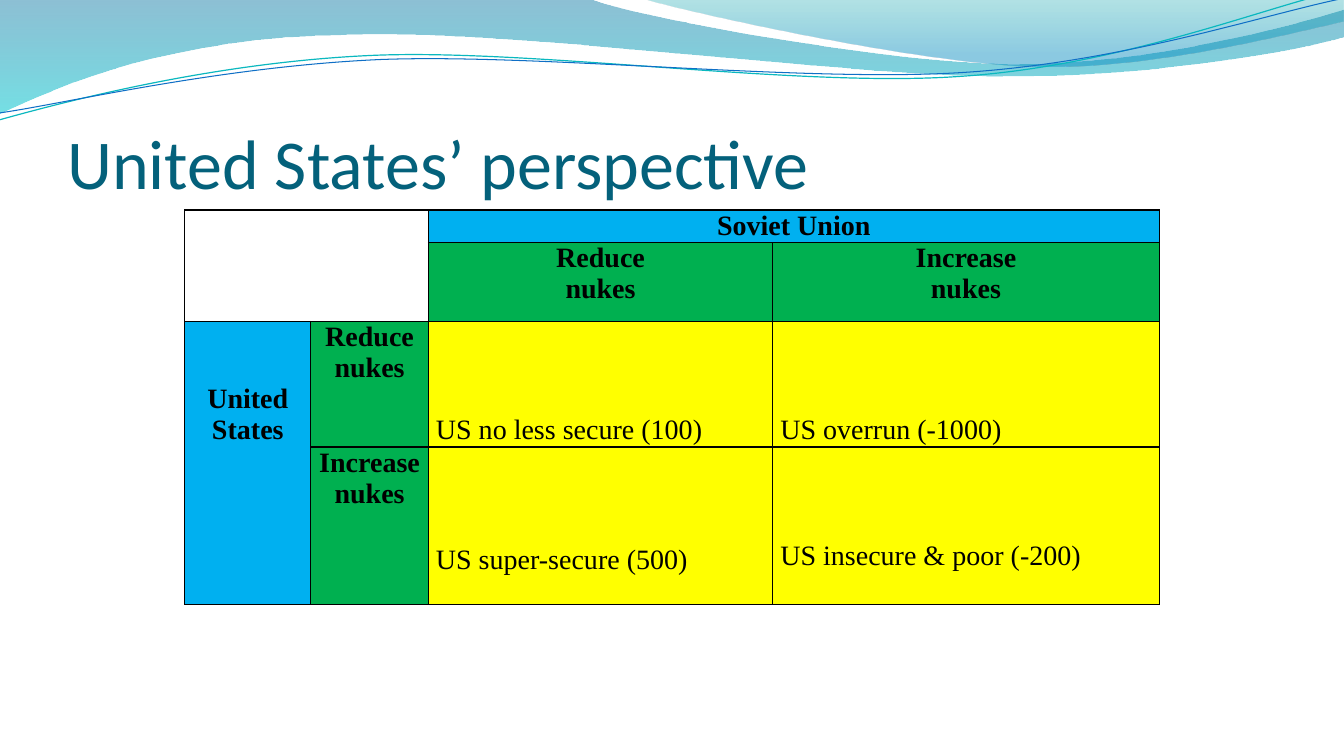
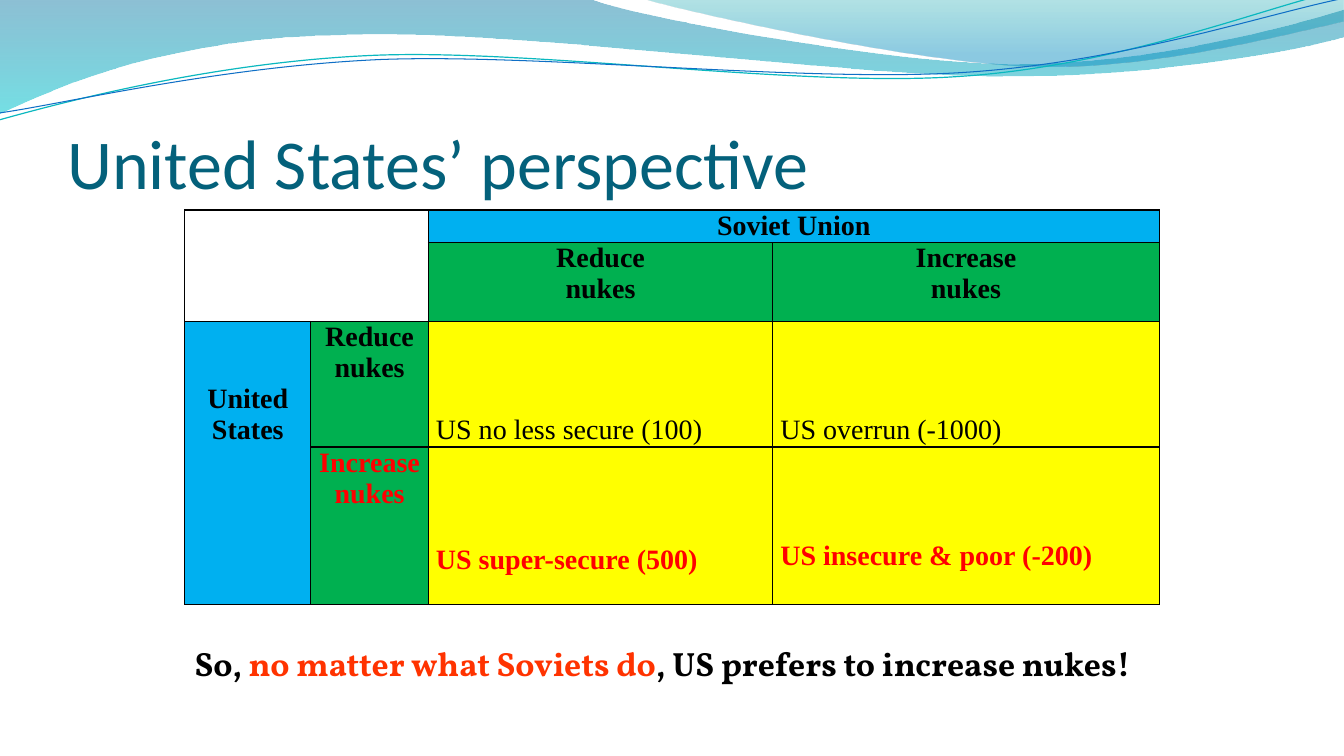
from dataclasses import dataclass

from lxml.etree import SubElement
from pptx import Presentation
from pptx.dml.color import RGBColor
from pptx.enum.text import MSO_ANCHOR, PP_ALIGN
from pptx.oxml import parse_xml
from pptx.oxml.ns import nsdecls, qn
from pptx.util import Pt


@dataclass(frozen=True)
class Theme:
    title: str = "04617B"
    ink: str = "000000"
    player: str = "00B0F0"
    choice: str = "00B050"
    payoff: str = "FFFF00"
    chosen: str = "FF0000"
    stress: str = "FF3300"
    title_font: str = "Calibri"
    table_font: str = "Times New Roman"
    note_font: str = "Vollkorn"
    title_size: float = 50
    table_size: float = 20
    note_size: float = 24


T = Theme()
TITLE = "United States’ perspective"
TITLE_BOX = (48, 55.5, 864, 90)
TABLE_AT = (132, 150)
COLS = (90, 84, 246, 276)
ROWS = (23.4, 56.2, 89.7, 112.8)
NOTE_BOX = (132, 456, 689, 36)
CHOSEN_ROW = 3

# row, column, rows spanned, columns spanned, role, lines, space above
CELLS = [
    (0, 0, 2, 2, None, (), 0),
    (0, 2, 1, 2, "player", ("Soviet Union",), 0),
    (1, 2, 1, 1, "choice", ("Reduce", "nukes"), 0),
    (1, 3, 1, 1, "choice", ("Increase", "nukes"), 0),
    (2, 0, 2, 1, "player", ("United States",), 44.3),
    (2, 1, 1, 1, "choice", ("Reduce nukes",), 0),
    (2, 2, 1, 1, "payoff", ("US no less secure (100)",), 66.4),
    (2, 3, 1, 1, "payoff", ("US overrun (-1000)",), 66.4),
    (3, 1, 1, 1, "choice", ("Increase nukes",), 0),
    (3, 2, 1, 1, "payoff", ("US super-secure (500)",), 70),
    (3, 3, 1, 1, "payoff", ("US insecure & poor (-200)",), 66.6),
]

# whether the chosen row is marked, closing remark
SLIDES = [
    (False, []),
    (True, [("So, ", T.ink), ("no matter what Soviets do", T.stress),
            (", US prefers to increase nukes!", T.ink)]),
]

# Two numbers are a corner, six are a Bézier curve. Stops: place, colour, opacity.
BANDS = [
    ([(-0.7, -0.4), (422.6, -0.4), (456.5, 12.5, 637.2, 45.8, 727.9, 45.8),
      (819.4, 45.8, 920.2, 19, 960, 6.8), (961, 26.2),
      (943.9, 32, 835.2, 55, 715.7, 54.4),
      (596.9, 54.4, 366.5, 20.6, 247, 24.9),
      (123.8, 26.3, 43.9, 60, -0.7, 81.4)],
     [(0, "0074A1", 45), (100, "00C6CF", 55)]),
    ([(460.1, -0.4), (488.9, 8.2, 654.5, 45, 738, 47.2),
      (821.5, 50, 923, 23.3, 959.8, 15.4), (960, -0.4)],
     [(0, "00A1A9", 30), (80, "008BBF", 45)]),
]
STRANDS = [
    ([(-0.7, 85.7), (46.1, 72.7, 151.9, 44.6, 265.7, 39.6),
      (379.4, 34.6, 568.8, 62.6, 684, 54.7),
      (799.2, 47.5, 901.4, 5.8, 958.3, -7.2)], "0AB8BF", 0.85),
    ([(0, 80.6), (45.4, 74.2, 157, 47.5, 272.2, 42.5),
      (386.6, 38.2, 573.1, 59, 687.6, 51.8),
      (802.8, 44.6, 903.6, 10.1, 960.5, -1.4)], "0F6FC6", 0.75),
]


def rgb(value):
    return RGBColor.from_string(value)


def write(p, text, *, font, size, color=T.ink, bold=False, align=PP_ALIGN.LEFT):
    p.alignment = align
    r = p.add_run()
    r.text = text
    r.font.name, r.font.size, r.font.bold = font, Pt(size), bold
    r.font.color.rgb = rgb(color)


def add_outline(s, parts, closed):
    """Join the end points by lines, then bend the lines that are curves."""
    ends = [(Pt(part[-2]), Pt(part[-1])) for part in parts]
    builder = s.shapes.build_freeform(*ends[0])
    builder.add_line_segments(ends[1:], close=closed)
    sp = builder.convert_to_shape()
    lines = list(sp.element.iter(qn("a:lnTo")))
    for line, part in zip(lines, parts[1:]):
        if len(part) == 6:
            curve = parse_xml(f'<a:cubicBezTo {nsdecls("a")}/>')
            for x, y in zip(part[::2], part[1::2]):
                SubElement(curve, qn("a:pt"), x=str(Pt(x) - sp.left),
                           y=str(Pt(y) - sp.top))
            line.getparent().replace(line, curve)
    sp.shadow.inherit = False
    sp.fill.background()
    sp.line.fill.background()
    return sp


def fade(sp, stops):
    """Fill a shape from top to bottom with translucent colours."""
    gs = "".join(f'<a:gs pos="{pos * 1000}"><a:srgbClr val="{color}">'
                 f'<a:alpha val="{alpha * 1000}"/></a:srgbClr></a:gs>'
                 for pos, color, alpha in stops)
    grad = parse_xml(f'<a:gradFill {nsdecls("a")} rotWithShape="1"><a:gsLst>{gs}'
                     '</a:gsLst><a:lin ang="5400000" scaled="0"/></a:gradFill>')
    props = sp.element.spPr
    props.replace(props.find(qn("a:noFill")), grad)


def decorate(master, s):
    """Draw the waves on a slide and move them behind everything on the master."""
    waves = []
    for parts, stops in BANDS:
        sp = add_outline(s, parts, True)
        fade(sp, stops)
        waves.append(sp)
    for parts, color, width in STRANDS:
        sp = add_outline(s, parts, False)
        sp.line.color.rgb = rgb(color)
        sp.line.width = Pt(width)
        waves.append(sp)
    tree = master.shapes.element
    for i, sp in enumerate(waves):
        tree.insert(2 + i, sp.element)


def place_title(layout):
    title = layout.placeholders[0]
    title.left, title.top, title.width, title.height = map(Pt, TITLE_BOX)
    tf = title.text_frame
    tf.vertical_anchor = MSO_ANCHOR.BOTTOM
    tf.margin_left = tf.margin_right = tf.margin_bottom = 0
    tf.margin_top = Pt(3.6)


def set_borders(cell):
    tc_pr = cell._tc.get_or_add_tcPr()
    for i, side in enumerate("LRTB"):
        ln = SubElement(tc_pr, qn(f"a:ln{side}"), w=str(Pt(1)))
        fill = SubElement(ln, qn("a:solidFill"))
        SubElement(fill, qn("a:srgbClr"), val=T.ink)
        tc_pr.insert(i, ln)


def add_payoffs(s, marked):
    frame = s.shapes.add_table(len(ROWS), len(COLS), *map(Pt, TABLE_AT),
                               Pt(sum(COLS)), Pt(sum(ROWS)))
    table = frame.table
    table.first_row = table.horz_banding = False
    for column, width in zip(table.columns, COLS):
        column.width = Pt(width)
    for row, height in zip(table.rows, ROWS):
        row.height = Pt(height)
    for cell in table.iter_cells():
        cell.margin_top = cell.margin_bottom = 0
        cell.fill.background()
        set_borders(cell)

    for row, col, rows, cols, role, lines, above in CELLS:
        cell = table.cell(row, col)
        if rows * cols > 1:
            cell.merge(table.cell(row + rows - 1, col + cols - 1))
        if role is None:
            continue
        is_payoff = role == "payoff"
        chosen = marked and row == CHOSEN_ROW
        cell.fill.solid()
        cell.fill.fore_color.rgb = rgb(getattr(T, role))
        cell.margin_left = cell.margin_right = Pt(5.4 if is_payoff else 2)
        cell.margin_top = Pt(above)
        tf = cell.text_frame
        for i, line in enumerate(lines):
            write(tf.add_paragraph() if i else tf.paragraphs[0], line,
                  font=T.table_font, size=T.table_size,
                  color=T.chosen if chosen else T.ink,
                  bold=chosen or not is_payoff,
                  align=PP_ALIGN.LEFT if is_payoff else PP_ALIGN.CENTER)


def add_note(s, parts):
    tf = s.shapes.add_textbox(*map(Pt, NOTE_BOX)).text_frame
    tf.word_wrap = True
    for text, color in parts:
        write(tf.paragraphs[0], text, font=T.note_font, size=T.note_size,
              color=color, bold=True)


def main():
    prs = Presentation()
    prs.slide_width, prs.slide_height = Pt(960), Pt(540)
    layout = prs.slide_layouts[5]
    place_title(layout)
    for marked, note in SLIDES:
        s = prs.slides.add_slide(layout)
        write(s.shapes.title.text_frame.paragraphs[0], TITLE,
              font=T.title_font, size=T.title_size, color=T.title)
        add_payoffs(s, marked)
        if note:
            add_note(s, note)
    decorate(prs.slide_master, prs.slides[0])
    prs.save("out.pptx")


if __name__ == "__main__":
    main()
